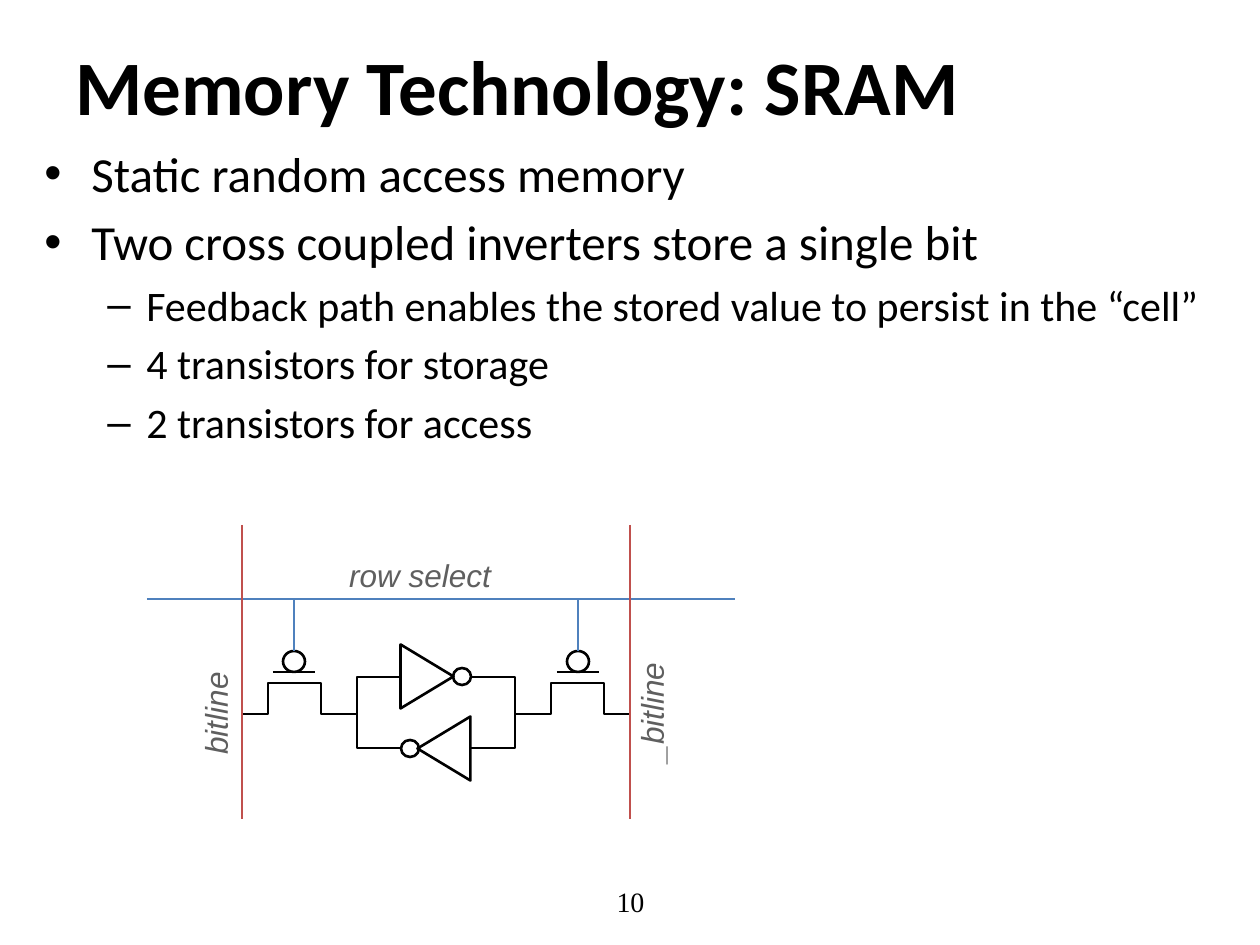
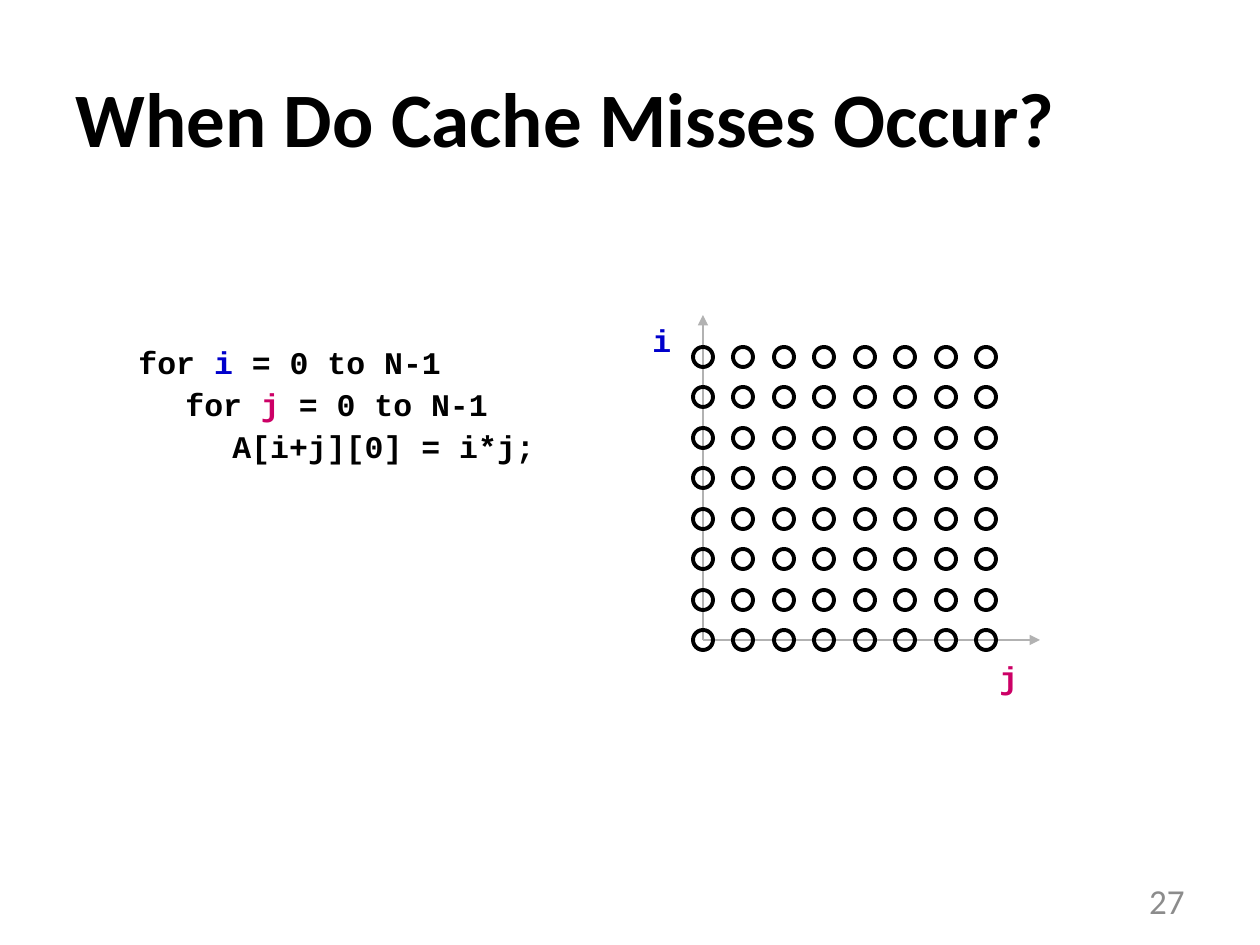
import pptx
import pptx.dml.color
import pptx.enum.shapes
import pptx.enum.text
import pptx.oxml.ns
import pptx.util
from lxml import etree

RGBColor = pptx.dml.color.RGBColor
Shape = pptx.enum.shapes.MSO_SHAPE
Align = pptx.enum.text.PP_ALIGN
Anchor = pptx.enum.text.MSO_ANCHOR
qn = pptx.oxml.ns.qn

BLACK = RGBColor(0x00, 0x00, 0x00)
LABEL_GRAY = RGBColor(0x5F, 0x5F, 0x5F)
AXIS_GRAY = RGBColor(0xB2, 0xB2, 0xB2)
NUMBER_GRAY = RGBColor(0x8C, 0x8C, 0x8C)
ROW_BLUE = RGBColor(0x4F, 0x81, 0xBD)
BITLINE_RED = RGBColor(0xC0, 0x50, 0x4D)
I_BLUE = RGBColor(0x00, 0x00, 0xCC)
J_PINK = RGBColor(0xCC, 0x00, 0x66)

PX_PER_INCH = 126
CODE = dict(size=18, font="Courier New", bold=True, line_spacing=0.7, before=9)
WIRE_LABEL = dict(size=18, font="Arial", color=LABEL_GRAY, italic=True,
                  align=Align.CENTER, line_spacing=0.9)


def px(length):
    return pptx.util.Emu(round(length * 914400 / PX_PER_INCH))


def add_box(page, area, anchor=Anchor.TOP, wrap=True, grow=False, rotation=0):
    box = page.shapes.add_textbox(*map(px, area))
    box.rotation = rotation
    frame = box.text_frame
    frame.word_wrap = wrap
    frame.vertical_anchor = anchor
    if grow:
        frame.auto_size = pptx.enum.text.MSO_AUTO_SIZE.SHAPE_TO_FIT_TEXT
    return frame


def add_para(frame, text, size, font="Calibri", color=BLACK, bold=False,
             italic=False, align=Align.LEFT, line_spacing=None, before=0,
             margin=0, hanging=0, bullet=None):
    """Fill the first empty paragraph or add one; text is a string or (text, colour) pairs."""
    para = frame.paragraphs[0]
    if para.runs:
        para = frame.add_paragraph()
    para.alignment = align
    para.space_before = pptx.util.Pt(before)
    if line_spacing:
        para.line_spacing = line_spacing
    properties = para._p.get_or_add_pPr()
    properties.set("marL", str(px(margin)))
    properties.set("indent", str(-px(hanging)))
    if bullet:
        etree.SubElement(properties, qn("a:buFont")).set("typeface", "Arial")
        etree.SubElement(properties, qn("a:buChar")).set("char", bullet)
    pairs = [(text, color)] if isinstance(text, str) else text
    for words, shade in pairs:
        span = para.add_run()
        span.text = words
        span.font.name = font
        span.font.size = pptx.util.Pt(size)
        span.font.bold = bold
        span.font.italic = italic
        span.font.color.rgb = shade


def add_text(page, area, text, anchor=Anchor.TOP, wrap=True, grow=False,
             rotation=0, **style):
    add_para(add_box(page, area, anchor, wrap, grow, rotation), text, **style)


def add_title(page, top, text):
    add_text(page, (63, top, 1134, 158), text, anchor=Anchor.MIDDLE, size=44, bold=True)


def add_number(page, left, width, text, **style):
    add_text(page, (left, 876, width, 50), text, anchor=Anchor.MIDDLE, **style)


def outline(shape, width):
    shape.shadow.inherit = False
    shape.fill.background()
    shape.line.color.rgb = BLACK
    shape.line.width = pptx.util.Pt(width)


def add_outlined(page, kind, area, width=1.5, rotation=0):
    shape = page.shapes.add_shape(kind, *map(px, area))
    shape.rotation = rotation
    outline(shape, width)
    return shape


def add_wire(page, points):
    corners = [(px(x), px(y)) for x, y in points]
    builder = page.shapes.build_freeform(*corners[0])
    builder.add_line_segments(corners[1:], close=False)
    outline(builder.convert_to_shape(), 1.5)


def add_line(page, start, end, color, arrow=False):
    line = page.shapes.add_connector(
        pptx.enum.shapes.MSO_CONNECTOR.STRAIGHT, *map(px, start + end))
    line.line.color.rgb = color
    line.line.width = pptx.util.Pt(1.5)
    properties = line._element.spPr
    if arrow:
        stroke = properties.find(qn("a:ln"))
        etree.SubElement(stroke, qn("a:tailEnd")).set("type", "triangle")
    etree.SubElement(properties, qn("a:effectLst"))
    return line


def add_cell_side(page, side_x):
    """Draw one half of the cell; side_x maps a left-half x to the half drawn."""
    add_wire(page, [(side_x(x), y) for x, y in
                    ((401, 677), (357, 677), (357, 748), (401, 748))])
    add_wire(page, [(side_x(x), y) for x, y in
                    ((242, 714), (268, 714), (268, 683),
                     (321, 683), (321, 714), (357, 714))])
    gate_x = side_x(294)
    add_line(page, (gate_x - 21, 672), (gate_x + 21, 672), BLACK)
    gate = add_outlined(page, Shape.OVAL, (gate_x - 11, 651, 22, 21))
    add_line(page, (side_x(242), 525), (side_x(242), 819), BITLINE_RED)
    select = add_line(page, (gate_x, 599), (gate_x, 651), ROW_BLUE)
    select.end_connect(gate, 0)


def add_sram_cell(page):
    add_outlined(page, Shape.ISOSCELES_TRIANGLE, (395, 650, 64, 53), rotation=90)
    add_outlined(page, Shape.OVAL, (453, 668, 18, 17))
    add_outlined(page, Shape.ISOSCELES_TRIANGLE, (412, 722, 64, 53), rotation=270)
    add_outlined(page, Shape.OVAL, (401, 740, 18, 17))
    add_line(page, (147, 599), (735, 599), ROW_BLUE)
    add_cell_side(page, lambda x: x)
    add_cell_side(page, lambda x: 872 - x)
    for text, area, rotation in (("row select", (330, 554, 180, 47), 0),
                                 ("bitline", (153, 690, 130, 47), 270),
                                 ("_bitline", (584, 689, 140, 47), 270)):
        add_text(page, area, text, wrap=False, grow=True, rotation=rotation, **WIRE_LABEL)


def add_iteration_space(page, count=8):
    origin = (703, 640)
    add_line(page, origin, (703, 315), AXIS_GRAY, arrow=True)
    add_line(page, origin, (1040, 640), AXIS_GRAY, arrow=True)
    add_text(page, (640, 325, 40, 39), "i", grow=True, color=I_BLUE, **CODE)
    add_text(page, (987, 662, 40, 39), "j", grow=True, color=J_PINK, **CODE)
    offsets = [step * 81 // 2 for step in range(count)]
    for rise in offsets:
        for run in offsets:
            add_outlined(page, Shape.OVAL, (693 + run, 630 - rise, 20, 20), width=2.25)


def build_sram(page):
    top_level = dict(size=28, before=5.6, margin=47, hanging=47, bullet="•")
    sub_level = dict(size=24, before=4.8, margin=102, hanging=39, bullet="–")
    body = add_box(page, (32, 137, 1187, 716))
    for text, level in (
            ("Static random access memory", top_level),
            ("Two cross coupled inverters store a single bit", top_level),
            ("Feedback path enables the stored value to persist in the “cell”", sub_level),
            ("4 transistors for storage", sub_level),
            ("2 transistors for access", sub_level)):
        add_para(body, text, **level)
    add_title(page, 6, "Memory Technology: SRAM")
    add_number(page, 431, 399, "10", size=16, font="Times New Roman", align=Align.CENTER)
    add_sram_cell(page)


def build_cache_misses(page):
    add_title(page, 38, "When Do Cache Misses Occur?")
    loop = add_box(page, (126, 347, 462, 130), grow=True)
    bounds = (" = 0 to N-1", BLACK)
    code_lines = ([("for ", BLACK), ("i", I_BLUE), bounds],
                  [("for ", BLACK), ("j", J_PINK), bounds],
                  "A[i+j][0] = i*j;")
    for depth, text in enumerate(code_lines):
        add_para(loop, text, margin=47 * depth, **CODE)
    add_iteration_space(page)
    add_number(page, 903, 294, "27", size=20, color=NUMBER_GRAY, align=Align.RIGHT)


def main():
    deck = pptx.Presentation()
    deck.slide_width, deck.slide_height = px(1260), px(945)
    for build in (build_sram, build_cache_misses):
        build(deck.slides.add_slide(deck.slide_layouts[6]))
    deck.save("out.pptx")


if __name__ == "__main__":
    main()
